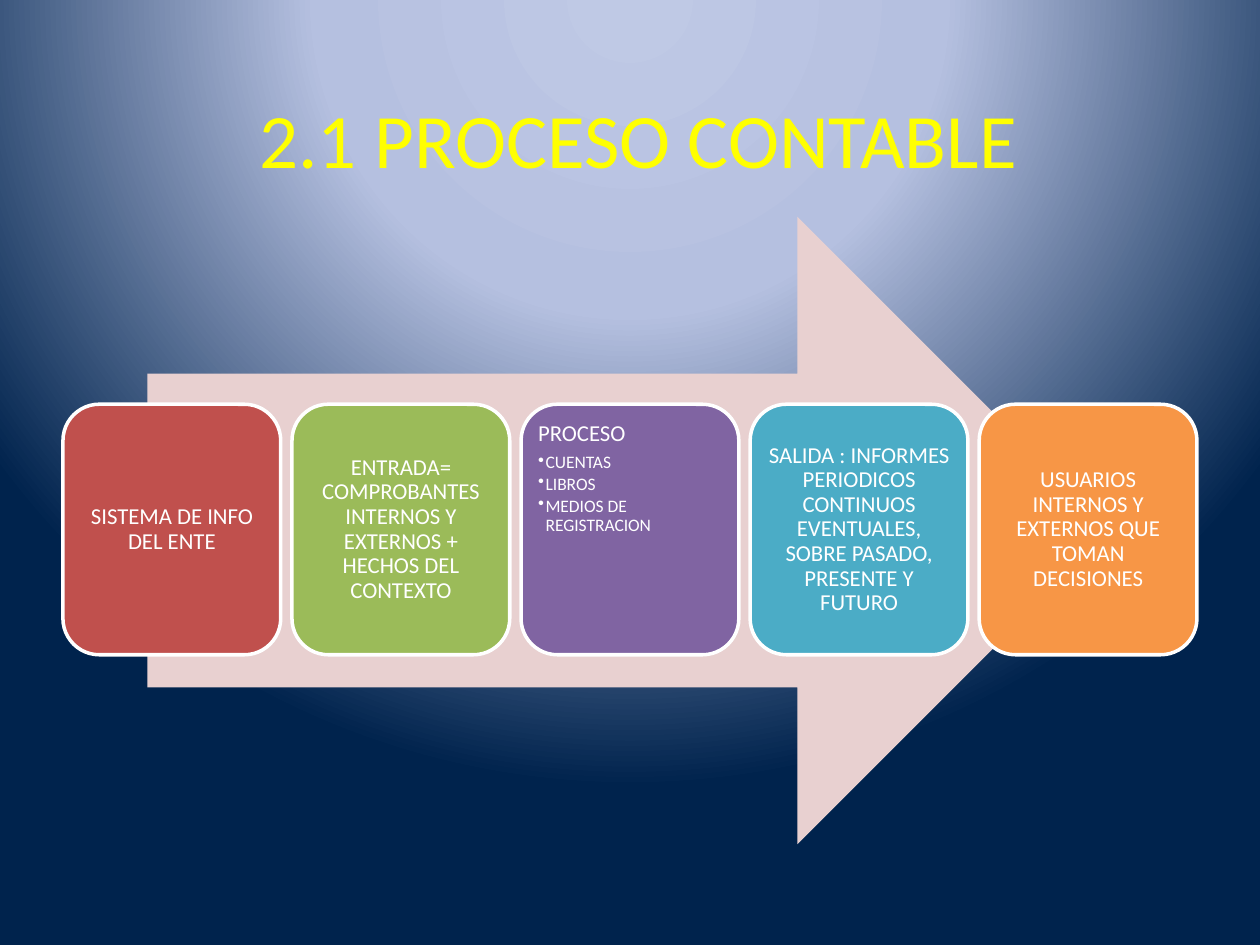
"""Build the accounting process slide: five stages over a wide arrow."""
from lxml.etree import SubElement
from pptx import Presentation
from pptx.dml.color import RGBColor
from pptx.enum.shapes import MSO_SHAPE as Shape
from pptx.enum.text import MSO_ANCHOR as Anchor, PP_ALIGN as Align
from pptx.oxml.ns import qn
from pptx.util import Cm, Pt

WHITE = RGBColor(0xFF, 0xFF, 0xFF)
YELLOW = RGBColor(0xFF, 0xFF, 0x00)
ROSE = RGBColor(0xE8, 0xD0, 0xD0)
RED = RGBColor(0xC0, 0x50, 0x4D)
GREEN = RGBColor(0x9B, 0xBB, 0x59)
PURPLE = RGBColor(0x80, 0x64, 0xA2)
AQUA = RGBColor(0x4B, 0xAC, 0xC6)
ORANGE = RGBColor(0xF7, 0x96, 0x46)
GLOW = [(0, RGBColor(0xBF, 0xC9, 0xE5)), (40, RGBColor(0xB5, 0xC0, 0xE0)),
        (100, RGBColor(0x00, 0x23, 0x4D))]
GLOW_CENTRE = {"l": 50, "t": -80, "r": 50, "b": 180}

TITLE = [(" ", WHITE), ("2.1 PROCESO CONTABLE", YELLOW)]
STAGES = [
    (RED, "SISTEMA DE INFO DEL ENTE", []),
    (GREEN, "ENTRADA= COMPROBANTES INTERNOS Y EXTERNOS + HECHOS DEL CONTEXTO", []),
    (PURPLE, "PROCESO", ["CUENTAS", "LIBROS", "MEDIOS DE REGISTRACION"]),
    (AQUA, "SALIDA : INFORMES PERIODICOS CONTINUOS EVENTUALES, "
           "SOBRE PASADO, PRESENTE Y FUTURO", []),
    (ORANGE, "USUARIOS INTERNOS Y EXTERNOS QUE TOMAN DECISIONES", []),
]

MARGIN, CONTENT_WIDTH = 1.27, 22.86
STAGE_TOP, STAGE_WIDTH, STAGE_HEIGHT = 8.15, 4.39, 5.05
STAGE_PITCH = (CONTENT_WIDTH - STAGE_WIDTH) / (len(STAGES) - 1)
INSET, BULLET_INDENT = 0.13, 0.15


def paint_background(slide):
    slide.background.fill.gradient()
    gradient = next(slide.element.iter(qn("a:gradFill")))
    for part in list(gradient):
        gradient.remove(part)
    stops = SubElement(gradient, qn("a:gsLst"))
    for percent, color in GLOW:
        stop = SubElement(stops, qn("a:gs"), pos=str(percent * 1000))
        SubElement(stop, qn("a:srgbClr"), val=str(color))
    circle = SubElement(gradient, qn("a:path"), path="circle")
    SubElement(circle, qn("a:fillToRect"),
               {side: str(percent * 1000) for side, percent in GLOW_CENTRE.items()})


def add_run(paragraph, text, size, color):
    run = paragraph.add_run()
    run.text = text
    run.font.name, run.font.size = "Calibri", Pt(size)
    run.font.color.rgb = color


def add_filled(slide, kind, left, top, width, height, color):
    shape = slide.shapes.add_shape(kind, Cm(left), Cm(top), Cm(width), Cm(height))
    shape.shadow.inherit = False
    shape.fill.solid()
    shape.fill.fore_color.rgb = color
    shape.line.fill.background()
    return shape


def write_line(paragraph, text, size, space_after, align):
    paragraph.alignment = align
    paragraph.line_spacing = 0.9
    paragraph.space_after = Pt(space_after)
    add_run(paragraph, text, size, WHITE)


def add_stage(slide, index, color, heading, items):
    stage = add_filled(slide, Shape.ROUNDED_RECTANGLE, MARGIN + index * STAGE_PITCH,
                       STAGE_TOP, STAGE_WIDTH, STAGE_HEIGHT, color)
    stage.line.color.rgb = WHITE
    stage.line.width = Pt(2)
    frame = stage.text_frame
    frame.word_wrap = True
    frame.margin_left = frame.margin_right = Cm(INSET)
    frame.margin_top = frame.margin_bottom = Cm(INSET)
    frame.vertical_anchor = Anchor.TOP if items else Anchor.MIDDLE
    write_line(frame.paragraphs[0], heading, 13, 4.5,
               Align.LEFT if items else Align.CENTER)
    for item in items:
        bullet = frame.add_paragraph()
        bullet.level = 1
        write_line(bullet, item, 10, 1.5, Align.LEFT)
        properties = bullet._p.get_or_add_pPr()
        properties.set("marL", str(Cm(BULLET_INDENT)))
        properties.set("indent", str(-Cm(BULLET_INDENT)))
        SubElement(properties, qn("a:buChar"), char="•")


def main():
    deck = Presentation()
    deck.slide_width, deck.slide_height = Cm(25.4), Cm(19.05)
    slide = deck.slides.add_slide(deck.slide_layouts[6])
    paint_background(slide)

    title = slide.shapes.add_textbox(Cm(MARGIN), Cm(1.19), Cm(CONTENT_WIDTH), Cm(3.18))
    title.text_frame.word_wrap = True
    title.text_frame.vertical_anchor = Anchor.MIDDLE
    title_line = title.text_frame.paragraphs[0]
    title_line.alignment = Align.CENTER
    for text, color in TITLE:
        add_run(title_line, text, 44, color)

    add_filled(slide, Shape.RIGHT_ARROW, 2.97, 4.37, 19.43, 12.65, ROSE)
    for index, stage in enumerate(STAGES):
        add_stage(slide, index, *stage)
    deck.save("out.pptx")


if __name__ == "__main__":
    main()
